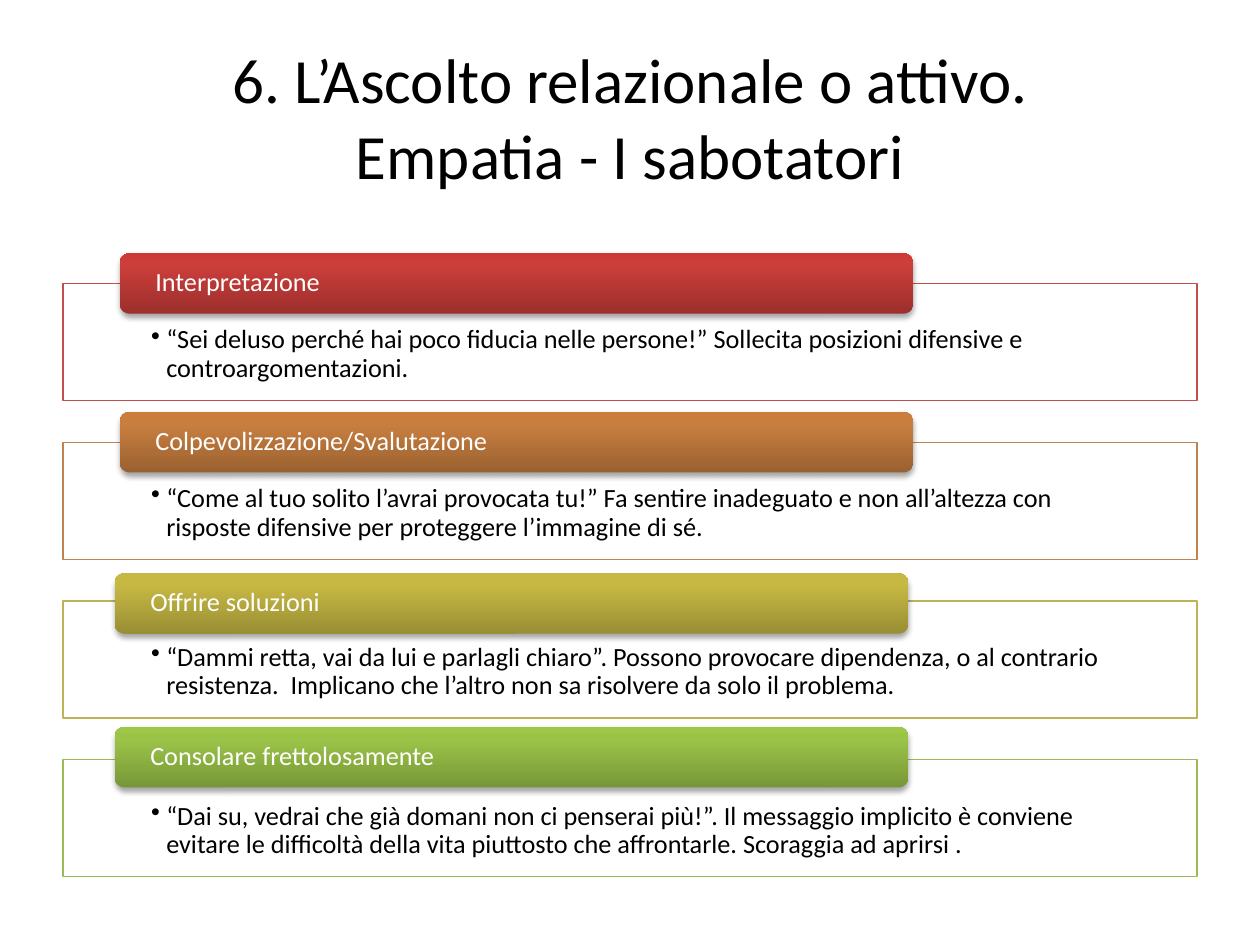
from lxml import etree
from pptx import Presentation
from pptx.dml.color import RGBColor
from pptx.enum.shapes import MSO_SHAPE
from pptx.enum.text import MSO_ANCHOR, PP_ALIGN
from pptx.oxml import parse_xml
from pptx.oxml.ns import nsdecls, qn
from pptx.util import Inches, Pt

RECTANGLE, ROUNDED = MSO_SHAPE.RECTANGLE, MSO_SHAPE.ROUNDED_RECTANGLE
TOP, MIDDLE = MSO_ANCHOR.TOP, MSO_ANCHOR.MIDDLE
LEFT, CENTER = PP_ALIGN.LEFT, PP_ALIGN.CENTER


def color(hex_value):
    return RGBColor.from_string(hex_value)


def write(shape, lines, size, hex_value, anchor, align, margins):
    """Write one paragraph, with a line break between lines."""
    frame = shape.text_frame
    frame.word_wrap = True
    frame.vertical_anchor = anchor
    (frame.margin_left, frame.margin_top,
     frame.margin_right, frame.margin_bottom) = map(Inches, margins)
    paragraph = frame.paragraphs[0]
    paragraph.alignment = align
    for index, line in enumerate(lines):
        if index:
            paragraph.add_line_break()
        run = paragraph.add_run()
        run.text = line
        run.font.name = "Calibri"
        run.font.size = Pt(size)
        run.font.color.rgb = color(hex_value)
    return paragraph


presentation = Presentation()
presentation.slide_width, presentation.slide_height = Inches(10), Inches(7.5)
slide = presentation.slides.add_slide(presentation.slide_layouts[5])

# Title
title = slide.shapes.title
title.left, title.top, title.width, title.height = map(Inches, (0.5, 0.3, 9, 1.25))
write(title, ["6. L’Ascolto relazionale o attivo.", "Empatia - I sabotatori"],
      36, "000000", MIDDLE, CENTER, (0.1, 0.05, 0.1, 0.05))

# Rows: heading, text, outline, gradient from bottom to top, heading left and rise
FIRST_ROW, ROW_STEP = 2.25, 1.26
saboteurs = [
    ("Interpretazione",
     "“Sei deluso perché hai poco fiducia nelle persone!” Sollecita posizioni "
     "difensive e controargomentazioni.",
     "C0504D", ("9C2F2D", "CB3E3A", "CE3B37"), 0.95, 0.24),
    ("Colpevolizzazione/Svalutazione",
     "“Come al tuo solito l’avrai provocata tu!” Fa sentire inadeguato e non "
     "all’altezza con risposte difensive per proteggere l’immagine di sé.",
     "BE8351", ("9A6130", "C87E3F", "CC7E3C"), 0.95, 0.24),
    ("Offrire soluzioni",
     "“Dammi retta, vai da lui e parlagli chiaro”. Possono provocare dipendenza, "
     "o al contrario resistenza.  Implicano che l’altro non sa risolvere da solo "
     "il problema.",
     "BDB255", ("988E34", "C6B843", "C9BB41"), 0.91, 0.22),
    ("Consolare frettolosamente",
     "“Dai su, vedrai che già domani non ci penserai più!”. Il messaggio implicito "
     "è conviene evitare le difficoltà della vita piuttosto che affrontarle. "
     "Scoraggia ad aprirsi .",
     "9BBB59", ("779737", "9BC348", "9DC746"), 0.91, 0.26),
]

for row, (heading, text, outline, gradient, left, rise) in enumerate(saboteurs):
    top = FIRST_ROW + row * ROW_STEP

    # Outlined box with the bulleted text
    box = slide.shapes.add_shape(RECTANGLE, *map(Inches, (0.5, top, 9, 0.93)))
    box.shadow.inherit = False
    box.fill.solid()
    box.fill.fore_color.rgb = color("FFFFFF")
    box.line.color.rgb = color(outline)
    box.line.width = Pt(0.75)
    paragraph = write(box, [text], 15, "000000", TOP, LEFT, (0.7, 0.34, 0.7, 0.12))
    paragraph.line_spacing = 0.9
    properties = paragraph._p.get_or_add_pPr()
    properties.set("marL", str(Inches(0.12)))
    properties.set("indent", str(Inches(-0.12)))
    etree.SubElement(properties, qn("a:buChar")).set("char", "•")

    # Heading bar with gradient and soft shadow
    bar = slide.shapes.add_shape(ROUNDED, *map(Inches, (left, top - rise, 6.3, 0.48)))
    bar.line.fill.background()
    bar.shadow.inherit = False
    stops = "".join(
        f'<a:gs pos="{position}"><a:srgbClr val="{stop}"/></a:gs>'
        for position, stop in zip((0, 80000, 100000), gradient))
    bar._element.spPr.find(qn("a:prstGeom")).addnext(parse_xml(
        f'<a:gradFill {nsdecls("a")} rotWithShape="1"><a:gsLst>{stops}</a:gsLst>'
        '<a:lin ang="16200000" scaled="0"/></a:gradFill>'))
    bar._element.spPr.find(qn("a:effectLst")).append(parse_xml(
        f'<a:outerShdw {nsdecls("a")} blurRad="{Pt(3.1)}" dist="{Pt(1.8)}" '
        'dir="5400000" rotWithShape="0"><a:srgbClr val="000000">'
        '<a:alpha val="35000"/></a:srgbClr></a:outerShdw>'))
    paragraph = write(bar, [heading], 15, "FFFFFF", MIDDLE, LEFT, (0.26, 0, 0.26, 0))
    paragraph.line_spacing = 0.9

presentation.save("out.pptx")
